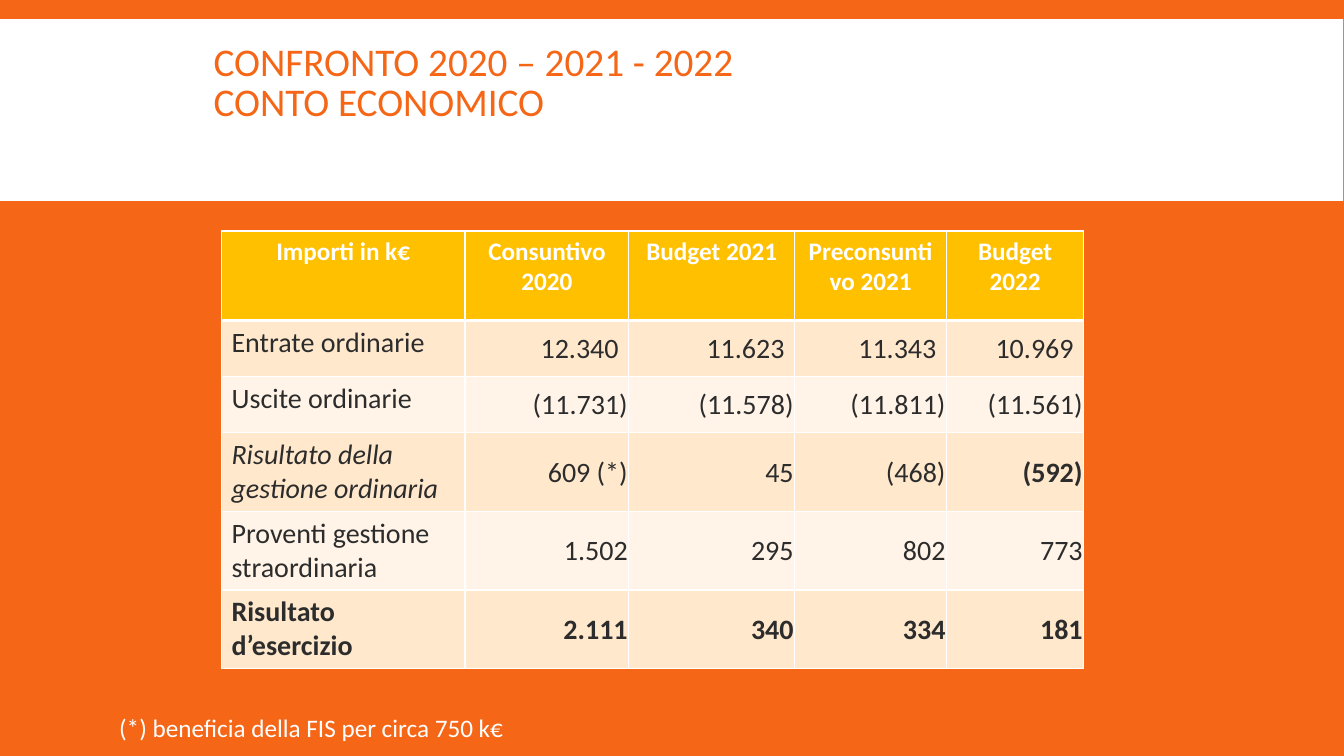
from lxml import etree
from pptx import Presentation
from pptx.dml.color import RGBColor
from pptx.enum import shapes, text
from pptx.oxml import ns
from pptx.util import Pt

ORANGE = RGBColor(0xF5, 0x66, 0x17)
WHITE = RGBColor(0xFF, 0xFF, 0xFF)
AMBER = RGBColor(0xFF, 0xC0, 0x00)
PEACH = RGBColor(0xFF, 0xE8, 0xCC)
CREAM = RGBColor(0xFF, 0xF4, 0xE7)
INK = RGBColor(0x2C, 0x2C, 0x2C)

COLUMN_WIDTHS = [174, 117, 118.5, 108.5, 98]
ROW_HEIGHTS = [64, 40, 40, 56, 56, 56]
ACCOUNTS = [
    ["Importi in k€", "Consuntivo 2020", "Budget 2021", "Preconsuntivo 2021", "Budget 2022"],
    ["Entrate ordinarie", "12.340", "11.623", "11.343", "10.969"],
    ["Uscite ordinarie", "(11.731)", "(11.578)", "(11.811)", "(11.561)"],
    ["Risultato della gestione ordinaria", "609 (*)", "45", "(468)", "(592)"],
    ["Proventi gestione straordinaria", "1.502", "295", "802", "773"],
    ["Risultato d’esercizio", "2.111", "340", "334", "181"],
]
HEADER, ORDINARY_INCOME, ORDINARY_RESULT, NET_RESULT = 0, 1, 3, 5
BUDGET_2022 = 4


class SlideBuilder:
    font = "Calibri"

    def __init__(self, deck):
        self.slide = deck.slides.add_slide(deck.slide_layouts[5])
        self.slide.background.fill.solid()
        self.slide.background.fill.fore_color.rgb = ORANGE

    def run(self, paragraph, words, size, color, bold=False, italic=False):
        part = paragraph.add_run()
        part.text = words
        part.font.name, part.font.size = self.font, Pt(size)
        part.font.bold, part.font.italic = bold, italic
        part.font.color.rgb = color

    def band(self, left, top, width, height, color):
        """Add a plain rectangle behind everything else."""
        band = self.slide.shapes.add_shape(
            shapes.MSO_SHAPE.RECTANGLE, Pt(left), Pt(top), Pt(width), Pt(height))
        band.shadow.inherit = False
        band.fill.solid()
        band.fill.fore_color.rgb = color
        band.line.fill.background()
        self.slide.shapes._spTree.insert(2, band._element)

    def title(self, lines, left, top, width, height):
        heading = self.slide.shapes.title
        heading.left, heading.top = Pt(left), Pt(top)
        heading.width, heading.height = Pt(width), Pt(height)
        frame = heading.text_frame
        frame.auto_size = text.MSO_AUTO_SIZE.NONE
        frame.word_wrap = True
        frame.vertical_anchor = text.MSO_ANCHOR.MIDDLE
        frame.margin_bottom = Pt(32.5)
        paragraph = frame.paragraphs[0]
        paragraph.alignment = text.PP_ALIGN.LEFT
        paragraph.line_spacing = 0.85
        for number, line in enumerate(lines):
            if number:
                paragraph.add_line_break()
            self.run(paragraph, line, 28, ORANGE)

    def note(self, words, left, top, width, height):
        frame = self.slide.shapes.add_textbox(
            Pt(left), Pt(top), Pt(width), Pt(height)).text_frame
        frame.word_wrap = True
        frame.auto_size = text.MSO_AUTO_SIZE.SHAPE_TO_FIT_TEXT
        self.run(frame.paragraphs[0], words, 18, WHITE)

    def borders(self, cell, top, bottom):
        """Draw white cell borders, with the given top and bottom widths."""
        properties = cell._tc.get_or_add_tcPr()
        for place, (side, width) in enumerate(
                [("L", 1), ("R", 1), ("T", top), ("B", bottom)]):
            line = etree.Element(ns.qn(f"a:ln{side}"), w=str(Pt(width)))
            fill = etree.SubElement(line, ns.qn("a:solidFill"))
            etree.SubElement(fill, ns.qn("a:srgbClr"), val=str(WHITE))
            properties.insert(place, line)

    def table(self, rows, left, top):
        grid = self.slide.shapes.add_table(
            len(rows), len(COLUMN_WIDTHS), Pt(left), Pt(top),
            Pt(sum(COLUMN_WIDTHS)), Pt(sum(ROW_HEIGHTS))).table
        for column, width in zip(grid.columns, COLUMN_WIDTHS):
            column.width = Pt(width)
        for row, height in zip(grid.rows, ROW_HEIGHTS):
            row.height = Pt(height)
        for r, row in enumerate(rows):
            for c, words in enumerate(row):
                self.cell(grid.cell(r, c), words, r, c)

    def cell(self, cell, words, r, c):
        is_header, is_label = r == HEADER, c == 0
        cell.fill.solid()
        cell.fill.fore_color.rgb = AMBER if is_header else PEACH if r % 2 else CREAM
        self.borders(cell, 3 if r == ORDINARY_INCOME else 1, 3 if is_header else 1)
        paragraph = cell.text_frame.paragraphs[0]
        if is_header:
            paragraph.alignment = text.PP_ALIGN.CENTER
            self.run(paragraph, words, 18, WHITE, bold=True)
            return
        if not is_label:
            paragraph.alignment = text.PP_ALIGN.RIGHT
            cell.vertical_anchor = text.MSO_ANCHOR.MIDDLE
            if r != ORDINARY_INCOME:
                cell.margin_left = cell.margin_right = cell.margin_top = Pt(0.75)
                cell.margin_bottom = Pt(0)
        self.run(paragraph, words, 20, INK,
                 bold=r == NET_RESULT or (r, c) == (ORDINARY_RESULT, BUDGET_2022),
                 italic=is_label and r == ORDINARY_RESULT)


def main():
    deck = Presentation()
    deck.slide_width, deck.slide_height = Pt(960), Pt(540)
    page = SlideBuilder(deck)
    page.band(0, 13.7, 959.5, 129.8, WHITE)
    page.title(["CONFRONTO 2020 – 2021 - 2022", "CONTO ECONOMICO"], 145.4, 15, 702, 120)
    page.table(ACCOUNTS, 158.2, 165)
    page.note("(*) beneficia della FIS per circa 750 k€", 78, 505, 710.5, 29)
    deck.save("out.pptx")


if __name__ == "__main__":
    main()
